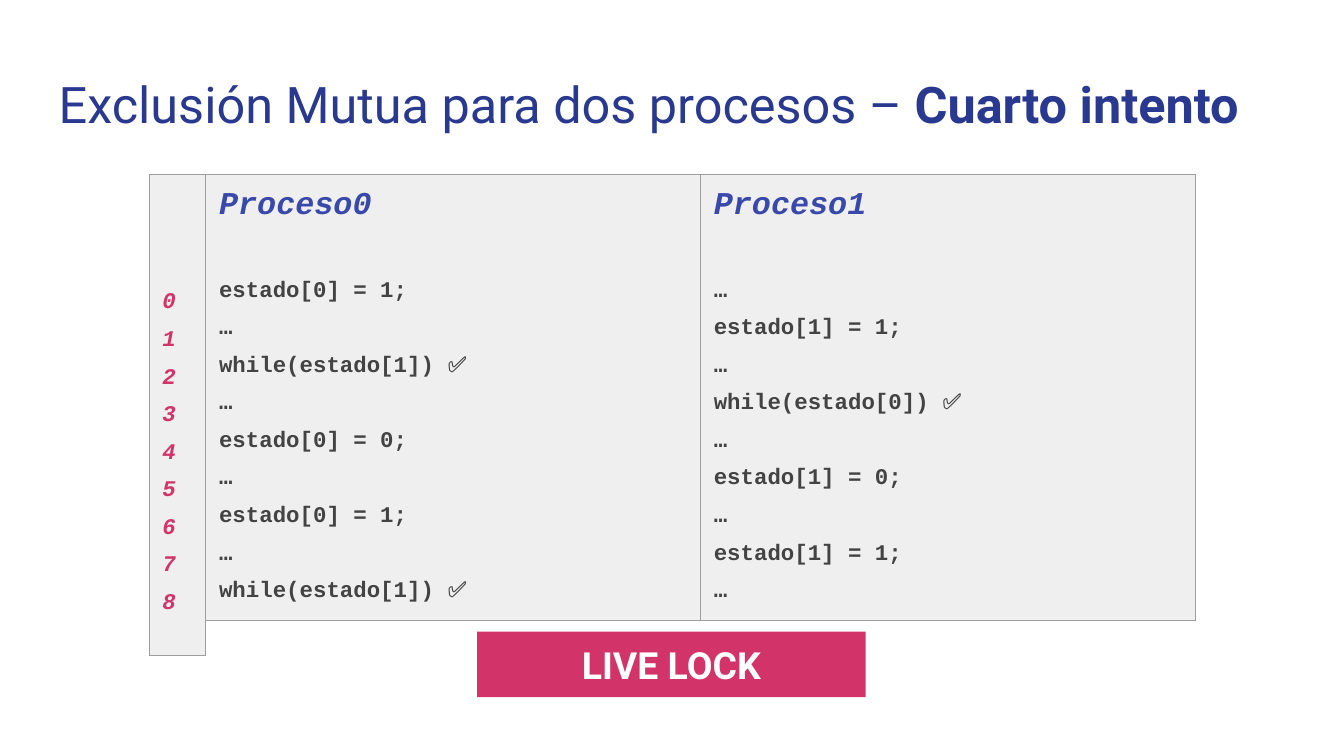
from dataclasses import dataclass

from lxml.etree import SubElement
from pptx import Presentation
from pptx.dml.color import RGBColor
from pptx.enum.shapes import MSO_SHAPE
from pptx.enum.text import MSO_ANCHOR as ANCHOR, PP_ALIGN as ALIGN
from pptx.oxml.ns import qn
from pptx.util import Cm, Pt

NAVY, INDIGO, PINK = "2A3990", "3949AB", "D23369"
GREY, PALE, EDGE, WHITE = "434343", "EFEFEF", "9E9E9E", "FFFFFF"
LEFT, TOP, INSET = 2.82, 3.3, 0.25
NUM_W, PROC_W = 1.07, 9.35
N_LINES = 9

TITLE = {"name": "Roboto", "size": Pt(27), "bold": False}
BANNER = {"name": "Roboto", "size": Pt(20), "bold": True}
HEADING = {"name": "Courier New", "size": Pt(17), "bold": True, "italic": True}
CODE = {"name": "Courier New", "size": Pt(12), "bold": True, "italic": False}
NUMBER = CODE | {"italic": True}


@dataclass
class Line:
    text: str
    fmt: dict
    color: str
    spacing: float = 0.6
    before: float = 12


@dataclass
class Panel:
    left: float
    width: float
    height: float
    lines: list[Line]
    anchor: ANCHOR = ANCHOR.MIDDLE
    inset_top: float = INSET


def rgb(color: str) -> RGBColor:
    return RGBColor.from_string(color)


def add_run(p, text: str, fmt: dict, color: str) -> None:
    r = p.add_run()
    r.text = text
    for key, value in fmt.items():
        setattr(r.font, key, value)
    r.font.color.rgb = rgb(color)


def set_insets(obj, top: float = INSET) -> None:
    insets = {"left": INSET, "right": INSET, "top": top, "bottom": INSET}
    for side, value in insets.items():
        setattr(obj, f"margin_{side}", Cm(value))


def add_borders(cell) -> None:
    tcPr = cell._tc.get_or_add_tcPr()
    for side in ("lnL", "lnR", "lnT", "lnB"):
        ln = SubElement(tcPr, qn(f"a:{side}"), w=str(Pt(0.75)))
        SubElement(SubElement(ln, qn("a:solidFill")), qn("a:srgbClr"), val=EDGE)


def add_panel(s, panel: Panel) -> None:
    table = s.shapes.add_table(1, 1, Cm(panel.left), Cm(TOP),
                               Cm(panel.width), Cm(panel.height)).table
    table.first_row = table.horz_banding = False
    cell = table.cell(0, 0)
    add_borders(cell)
    cell.fill.solid()
    cell.fill.fore_color.rgb = rgb(PALE)
    cell.vertical_anchor = panel.anchor
    set_insets(cell, panel.inset_top)
    tf = cell.text_frame
    for i, line in enumerate(panel.lines):
        p = tf.add_paragraph() if i else tf.paragraphs[0]
        p.line_spacing = line.spacing
        p.space_before = Pt(line.before if i else 0)
        add_run(p, line.text, line.fmt, line.color)


def process_panel(k: int) -> Panel:
    on, off = f"estado[{k}] = 1;", f"estado[{k}] = 0;"
    wait = f"while(estado[{1 - k}]) ✅"
    steps = [on, wait, off, on, wait]
    lines = [Line(f"Proceso{k}", HEADING, INDIGO, 0.7)]
    for i in range(N_LINES):
        text = steps[i // 2] if i % 2 == k else "…"
        lines.append(Line(text, CODE, GREY, before=12 if i else 35))
    return Panel(LEFT + NUM_W + k * PROC_W, PROC_W, 8.43, lines)


def add_title(s) -> None:
    sp = s.shapes.add_textbox(Cm(0.86), Cm(1.14), Cm(23.67), Cm(1.68))
    tf = sp.text_frame
    tf.word_wrap = True
    set_insets(tf)
    p = tf.paragraphs[0]
    add_run(p, "Exclusión Mutua para dos procesos – ", TITLE, NAVY)
    add_run(p, "Cuarto intento", TITLE | {"bold": True}, NAVY)


def add_banner(s) -> None:
    sp = s.shapes.add_shape(MSO_SHAPE.RECTANGLE, Cm(9.02), Cm(11.94), Cm(7.34), Cm(1.24))
    sp.shadow.inherit = False
    sp.fill.solid()
    sp.fill.fore_color.rgb = rgb(PINK)
    sp.line.fill.background()
    tf = sp.text_frame
    tf.vertical_anchor = ANCHOR.MIDDLE
    set_insets(tf)
    p = tf.paragraphs[0]
    p.alignment = ALIGN.CENTER
    add_run(p, "LIVE LOCK", BANNER, WHITE)


def main() -> None:
    prs = Presentation()
    prs.slide_width, prs.slide_height = Cm(25.4), Cm(14.29)
    s = prs.slides.add_slide(prs.slide_layouts[6])
    add_title(s)
    for k in range(2):
        add_panel(s, process_panel(k))
    numbers = [Line(str(i), NUMBER, PINK) for i in range(N_LINES)]
    add_panel(s, Panel(LEFT, NUM_W, 9.09, numbers, ANCHOR.TOP, 2.31))
    add_banner(s)
    prs.save("out.pptx")


if __name__ == "__main__":
    main()
